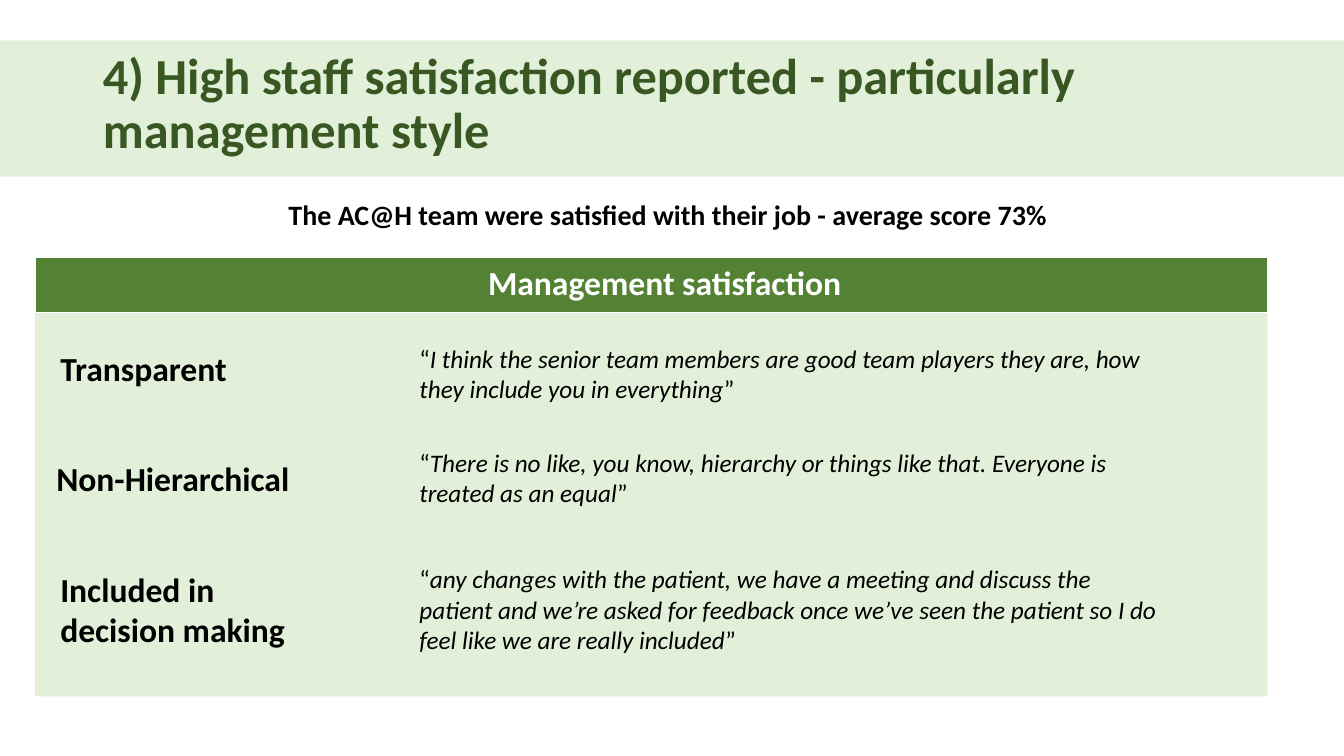
"""Build a slide on staff satisfaction with management style."""
from pptx import Presentation
from pptx.dml.color import RGBColor
from pptx.enum.shapes import MSO_SHAPE as Shape
from pptx.enum.text import MSO_ANCHOR as Anchor, PP_ALIGN as Align
from pptx.util import Cm, Pt

PALE, GREEN, DARK = "E2F0D9", "548235", "385723"
WHITE, BLACK = "FFFFFF", "000000"


def colour(hex_text):
    return RGBColor.from_string(hex_text)


def write(box, spans, size, hex_text, **formats):
    frame = box.text_frame
    frame.word_wrap = True
    para = frame.paragraphs[0]
    para.alignment = Align.LEFT
    for text, extra in spans:
        span = para.add_run()
        span.text = text
        span.font.color.rgb = colour(hex_text)
        values = {"name": "Calibri", "size": Pt(size), **formats, **extra}
        for name, value in values.items():
            setattr(span.font, name, value)


deck = Presentation()
deck.slide_width, deck.slide_height = Cm(33.87), Cm(19.05)
page = deck.slides.add_slide(deck.slide_layouts[5])

panels = [
    ((0.88, 6.55, 31.06, 11), PALE, None),
    ((0.88, 6.48, 31.06, 1.4), GREEN, WHITE),
    ((0, 1.02, 33.87, 3.43), PALE, None),
]
for place, fill, edge in panels:
    panel = page.shapes.add_shape(Shape.RECTANGLE, *map(Cm, place))
    panel.shadow.inherit = False
    panel.fill.solid()
    panel.fill.fore_color.rgb = colour(fill)
    if edge:
        panel.line.color.rgb = colour(edge)
        panel.line.width = Pt(1)
    else:
        panel.line.fill.background()

title = page.shapes.title
panel.element.addnext(title.element)
title_place = {"left": 2.34, "top": 0.81, "width": 29.21, "height": 3.68}
for side, length in title_place.items():
    setattr(title, side, Cm(length))
title.text_frame.vertical_anchor = Anchor.MIDDLE
title.text_frame.paragraphs[0].line_spacing = 0.9
write(title, [("4) High staff satisfaction reported - particularly management style", {})],
      36, DARK, bold=True)

labels = [
    ("The AC@H team were satisfied with their job - average score 73%",
     (7.02, 4.85, 19.84, 1.12), 20, BLACK),
    ("Management satisfaction", (12.05, 6.48, 10.67, 1.27), 24, WHITE),
    ("Transparent", (1.27, 8.64, 5, 1.27), 24, BLACK),
    ("Non-Hierarchical", (1.17, 11.42, 6.5, 1.27), 24, BLACK),
    ("Included in decision making", (1.27, 14.2, 6.38, 2.31), 24, BLACK),
]
for text, place, size, hex_text in labels:
    box = page.shapes.add_textbox(*map(Cm, place))
    write(box, [(text, {})], size, hex_text, bold=True)

quotes = [
    ("I think the senior team members are good team players they are, "
     "how they include you in everything", 8.52, 18.97, 1.8),
    ("There is no like, you know, hierarchy or things like that. "
     "Everyone is treated as an equal", 11.15, 18.97, 1.8),
    ("any changes with the patient, we have a meeting and discuss the patient "
     "and we’re asked for feedback once we’ve seen the patient so I do feel "
     "like we are really included", 14.08, 19.2, 2.57),
]
for quote, top, width, height in quotes:
    box = page.shapes.add_textbox(Cm(10.32), Cm(top), Cm(width), Cm(height))
    write(box, [("“", {}), (quote, {"italic": True}), ("”", {})], 18, BLACK)

deck.save("out.pptx")
